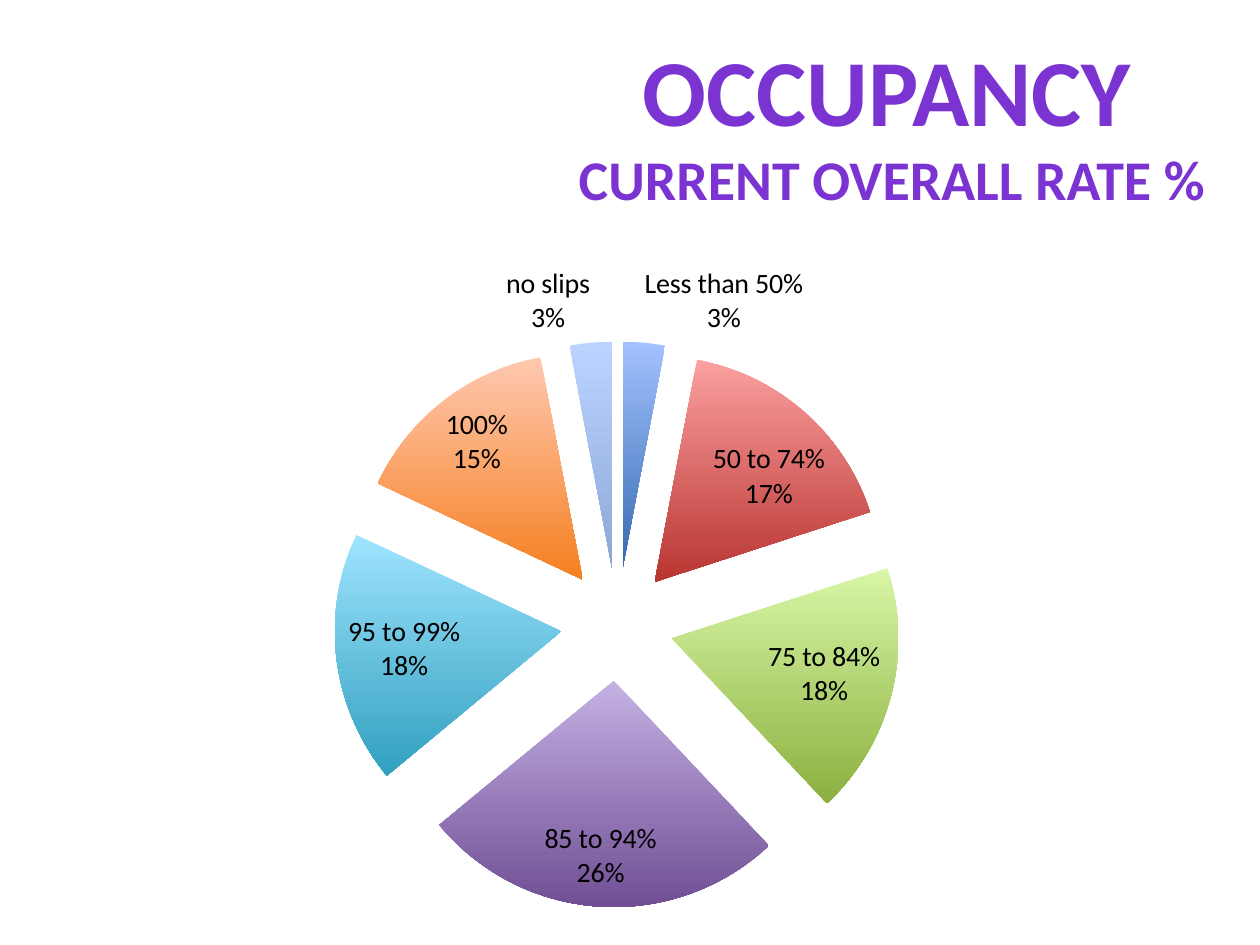
from dataclasses import dataclass

from lxml import etree
from pptx import Presentation
from pptx.chart.data import CategoryChartData
from pptx.dml.color import RGBColor
from pptx.enum.chart import XL_CHART_TYPE, XL_LABEL_POSITION
from pptx.enum.text import MSO_ANCHOR, MSO_AUTO_SIZE, PP_ALIGN
from pptx.oxml.ns import qn
from pptx.util import Inches, Pt

PIE = XL_CHART_TYPE.PIE
BEST = XL_LABEL_POSITION.BEST_FIT
CENTER, RIGHT = PP_ALIGN.CENTER, PP_ALIGN.RIGHT
TOP, NO_FIT = MSO_ANCHOR.TOP, MSO_AUTO_SIZE.NONE

FONT = "Calibri"
PURPLE = RGBColor(0x7B, 0x34, 0xD2)
BLACK = RGBColor(0, 0, 0)
TITLE_ONLY = 5
BURST = 25  # slice offset, percent of radius


@dataclass
class Slice:
    name: str
    share: int
    light: RGBColor
    dark: RGBColor


SLICES = [
    Slice("Less than 50%", 3, RGBColor(0xA3, 0xC1, 0xFF), RGBColor(0x36, 0x6B, 0xB0)),
    Slice("50 to 74%", 17, RGBColor(0xFB, 0xA0, 0xA0), RGBColor(0xB8, 0x35, 0x31)),
    Slice("75 to 84%", 18, RGBColor(0xD8, 0xF6, 0xA6), RGBColor(0x8C, 0xB0, 0x3F)),
    Slice("85 to 94%", 26, RGBColor(0xC4, 0xB1, 0xE3), RGBColor(0x70, 0x4E, 0x94)),
    Slice("95 to 99%", 18, RGBColor(0x9F, 0xE4, 0xFF), RGBColor(0x31, 0xA0, 0xBF)),
    Slice("100%", 15, RGBColor(0xFF, 0xC8, 0xB0), RGBColor(0xF5, 0x80, 0x20)),
    Slice("no slips", 3, RGBColor(0xBD, 0xD3, 0xFF), RGBColor(0x8C, 0xA8, 0xD8)),
]


def write(para, text: str, *, size: int, align, color=PURPLE, bold=True) -> None:
    para.alignment = align
    run = para.add_run()
    run.text = text
    font = run.font
    font.name, font.size, font.bold = FONT, Pt(size), bold
    font.color.rgb = color


def add_title(slide) -> None:
    title = slide.shapes.title
    title.left, title.top = Inches(4.41), Inches(0.2)
    title.width, title.height = Inches(5.26), Inches(1.55)
    frame = title.text_frame
    frame.word_wrap = False
    frame.auto_size = NO_FIT
    frame.vertical_anchor = TOP
    write(frame.paragraphs[0], "OCCUPANCY", size=54, align=CENTER)
    write(frame.add_paragraph(), "CURRENT OVERALL RATE %", size=32, align=RIGHT)


def paint(point, part: Slice) -> None:
    fill = point.format.fill
    fill.gradient()
    fill.gradient_angle = 270
    for stop, color, place in zip(fill.gradient_stops, (part.light, part.dark), (0, 1)):
        stop.color.rgb = color
        stop.position = place
    point.format.line.fill.background()


def place_plot(chart, **box: float) -> None:
    """Fix the inner plot area, in fractions of the chart."""
    area = chart._chartSpace.chart.plotArea
    for old in area.findall(qn("c:layout")):
        area.remove(old)
    layout = etree.Element(qn("c:layout"))
    manual = etree.SubElement(layout, qn("c:manualLayout"))
    rules = {"layoutTarget": "inner", "xMode": "edge", "yMode": "edge", **box}
    for tag, val in rules.items():
        etree.SubElement(manual, qn(f"c:{tag}")).set("val", str(val))
    area.insert(0, layout)


def add_pie(slide, parts: list[Slice]) -> None:
    data = CategoryChartData()
    data.categories = [part.name for part in parts]
    data.add_series("Series 1", [part.share for part in parts])
    chart = slide.shapes.add_chart(
        PIE, Inches(0.41), Inches(1.96), Inches(8.98), Inches(5.35), data
    ).chart
    chart.has_legend = chart.has_title = False
    chart.font.name, chart.font.size = FONT, Pt(10)
    chart.font.color.rgb = BLACK
    place_plot(chart, x=0.25, y=0.14, w=0.5, h=0.84)

    # Slices
    plot = chart.plots[0]
    plot.vary_by_categories = True
    series = plot.series[0]
    for i, part in enumerate(parts):
        paint(series.points[i], part)
    burst = etree.Element(qn("c:explosion"))
    burst.set("val", str(BURST))
    series._element.find(qn("c:dPt")).addprevious(burst)

    # Labels
    labels = series.data_labels
    labels.show_category_name = labels.show_percentage = True
    labels.show_value = False
    labels.number_format, labels.number_format_is_linked = "0%", False
    labels.position = BEST
    labels.font.name, labels.font.size = FONT, Pt(16)
    labels.font.color.rgb = BLACK
    gap = etree.Element(qn("c:separator"))
    gap.text = "\n"
    labels._element.find(qn("c:showBubbleSize")).addnext(gap)


def main() -> None:
    deck = Presentation()
    deck.slide_width, deck.slide_height = Inches(10), Inches(7.5)
    slide = deck.slides.add_slide(deck.slide_layouts[TITLE_ONLY])
    add_title(slide)
    add_pie(slide, SLICES)
    deck.save("out.pptx")


if __name__ == "__main__":
    main()
